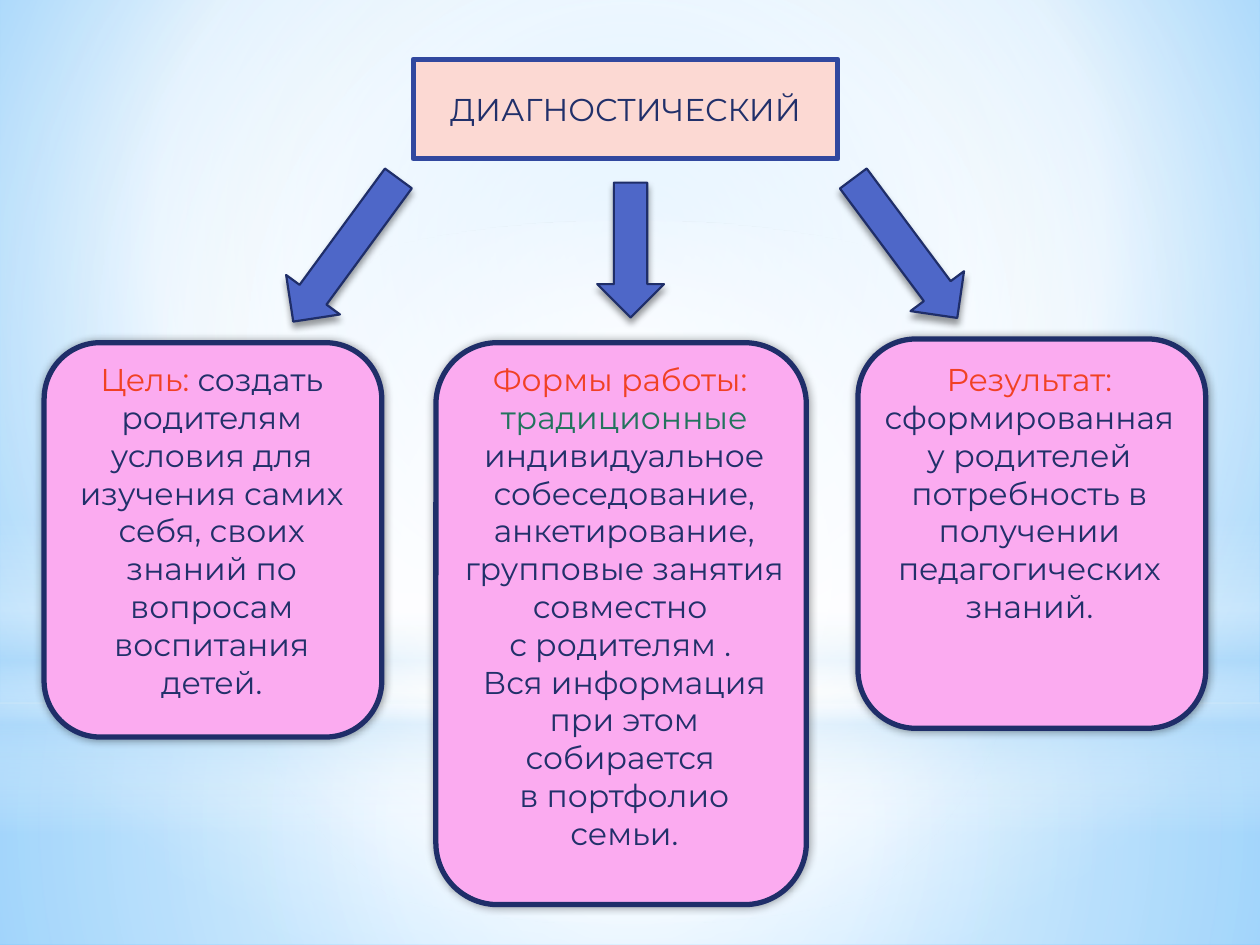
from pptx import Presentation, util as u
from pptx.dml.color import RGBColor
from pptx.enum import shapes, text
from pptx.oxml import parse_xml
from pptx.oxml.ns import nsdecls, qn

# The slide is a grid of 100 columns by 75 rows of square cells.
COLUMNS, ROWS = 100, 75
CELL = u.Inches(0.1)

FONT = "Montserrat"
NAVY = RGBColor(0x21, 0x30, 0x6A)
OUTLINE = RGBColor(0x1F, 0x2E, 0x69)
BLUE = RGBColor(0x4E, 0x67, 0xC8)
HEADER_LINE = RGBColor(0x31, 0x48, 0x9F)
PEACH = RGBColor(0xFC, 0xD9, 0xD3)
PINK = RGBColor(0xFB, 0xAB, 0xF0)
RED = RGBColor(0xF1, 0x41, 0x24)
GREEN = RGBColor(0x23, 0x73, 0x5D)
WHITE = RGBColor(0xFF, 0xFF, 0xFF)
PALE = RGBColor(0xB4, 0xDC, 0xFA)
SKY = RGBColor(0x9E, 0xD5, 0xFF)
DEEP_SKY = RGBColor(0x5B, 0xB9, 0xFF)

CENTRE = (50, 50, 50, 50)
TEXT_TOP = 28.1

# Each branch: card, arrow and text boxes in cells, arrow turn, paragraphs of spans.
BRANCHES = [
    ((3.5, 27.2, 26.8, 31.3), (24.8, 12.8, 5.3, 14.1), 36.3,
     (3.9, TEXT_TOP, 25.8, 28.3),
     [[("Цель: ", RED),
       ("создать родителям условия для изучения самих себя, своих знаний "
        "по вопросам воспитания детей.", NAVY)]]),
    ((34.6, 27.2, 29.4, 44.6), (47.4, 14.5, 5.3, 10.7), 0,
     (35.9, TEXT_TOP, 27.3, 43.4),
     [[("Формы работы: ", RED)],
      [("традиционные ", GREEN),
       ("индивидуальное собеседование, анкетирование, групповые занятия "
        "совместно ", NAVY)],
      [("с родителям . ", NAVY)],
      [("Вся информация при этом собирается ", NAVY)],
      [("в портфолио семьи.", NAVY)]]),
    ((68.1, 26.9, 27.6, 30.9), (69.2, 12.8, 5.3, 13.8), 323.3,
     (68.8, TEXT_TOP, 25.8, 22.2),
     [[("Результат: ", RED),
       ("сформированная у родителей потребность в получении "
        "педагогических знаний.", NAVY)]]),
]


def cells(box):
    return [round(CELL * length) for length in box]


def set_gradient(holder, stops, focus=None):
    """Replace the empty fill of holder by a gradient: radial around focus, or downwards."""
    marks = "".join(
        f'<a:gs pos="{place * 1000}"><a:srgbClr val="{colour}">'
        f'<a:alpha val="{alpha * 1000}"/></a:srgbClr></a:gs>'
        for place, colour, alpha in stops)
    if focus:
        edges = " ".join(f'{side}="{share * 1000}"' for side, share in zip("ltrb", focus))
        course = f'<a:path path="circle"><a:fillToRect {edges}/></a:path>'
    else:
        course = '<a:lin ang="5400000" scaled="0"/>'
    gradient = parse_xml(f'<a:gradFill {nsdecls("a")} rotWithShape="1">'
                         f'<a:gsLst>{marks}</a:gsLst>{course}</a:gradFill>')
    holder.replace(holder.find(qn("a:noFill")), gradient)


def add_shadow(shape, blur, distance=0, angle=0):
    shape.shadow.inherit = False
    shape._element.spPr.find(qn("a:effectLst")).append(parse_xml(
        f'<a:outerShdw {nsdecls("a")} blurRad="{u.Pt(blur)}" dist="{u.Pt(distance)}" '
        f'dir="{angle * 60000}" algn="ctr" rotWithShape="0"><a:srgbClr val="000000">'
        '<a:alpha val="40000"/></a:srgbClr></a:outerShdw>'))


def paint(shape, fill, line, width):
    shape.fill.solid()
    shape.fill.fore_color.rgb = fill
    shape.line.color.rgb = line
    shape.line.width = u.Pt(width)


def format_span(span, colour):
    span.font.name = FONT
    span.font.size = u.Pt(18)
    span.font.color.rgb = colour


def draw_backdrop(page):
    page.background.fill.background()
    set_gradient(page._element.cSld.bg.bgPr,
                 [(0, SKY, 100), (60, WHITE, 100), (100, DEEP_SKY, 100)], (20, 10, 20, 60))
    rectangle, oval = shapes.MSO_SHAPE.RECTANGLE, shapes.MSO_SHAPE.OVAL
    horizon = 55.8
    layers = [
        (rectangle, (0, horizon, COLUMNS, ROWS - horizon),
         [(0, WHITE, 91), (37, WHITE, 76), (100, PALE, 79)], CENTRE),
        (rectangle, (0, 0, COLUMNS, horizon),
         [(0, WHITE, 89), (48, WHITE, 62), (100, PALE, 79)], CENTRE),
        (rectangle, (0, 41.2, COLUMNS, 25),
         [(0, WHITE, 0), (29, WHITE, 30), (45, PALE, 40), (55, WHITE, 26),
          (65, PALE, 60), (100, WHITE, 0)], None),
        (oval, (0, 17.5, COLUMNS, 55.8), [(0, WHITE, 100), (56, WHITE, 0)], CENTRE),
    ]
    for kind, box, stops, focus in layers:
        layer = page.shapes.add_shape(kind, *cells(box))
        layer.shadow.inherit = False
        layer.line.fill.background()
        layer.fill.background()
        set_gradient(layer._element.spPr, stops, focus)


def draw_header(page, box):
    """Turn the title placeholder into a rounded box in front of the backdrop."""
    title = page.shapes.title
    title.left, title.top, title.width, title.height = cells(box)
    title._element.spPr.append(parse_xml(
        f'<a:prstGeom {nsdecls("a")} prst="roundRect"><a:avLst/></a:prstGeom>'))
    paint(title, PEACH, HEADER_LINE, 3)
    title.text_frame.text = "ДИАГНОСТИЧЕСКИЙ"
    title.text_frame.vertical_anchor = text.MSO_ANCHOR.MIDDLE
    para = title.text_frame.paragraphs[0]
    para.alignment = text.PP_ALIGN.CENTER
    format_span(para.runs[0], NAVY)
    page.shapes._spTree.append(title._element)


def draw_card(page, box):
    card = page.shapes.add_shape(shapes.MSO_SHAPE.ROUNDED_RECTANGLE, *cells(box))
    paint(card, PINK, OUTLINE, 3)
    add_shadow(card, 5)


def draw_arrow(page, box, turn):
    arrow = page.shapes.add_shape(shapes.MSO_SHAPE.DOWN_ARROW, *cells(box))
    arrow.rotation = turn
    paint(arrow, BLUE, OUTLINE, 1.25)
    add_shadow(arrow, 4, 3, 90)


def write_text(page, box, paragraphs):
    frame = page.shapes.add_textbox(*cells(box)).text_frame
    frame.word_wrap = True
    frame.auto_size = text.MSO_AUTO_SIZE.SHAPE_TO_FIT_TEXT
    for index, spans in enumerate(paragraphs):
        para = frame.add_paragraph() if index else frame.paragraphs[0]
        para.alignment = text.PP_ALIGN.CENTER
        for words, colour in spans:
            span = para.add_run()
            span.text = words
            format_span(span, colour)


def main():
    deck = Presentation()
    deck.slide_width, deck.slide_height = CELL * COLUMNS, CELL * ROWS
    page = deck.slides.add_slide(deck.slide_layouts.get_by_name("Title Only"))
    draw_backdrop(page)
    draw_header(page, (32.8, 4.7, 33.7, 7.9))
    for card, arrow, turn, text_box, paragraphs in BRANCHES:
        draw_card(page, card)
        draw_arrow(page, arrow, turn)
        write_text(page, text_box, paragraphs)
    deck.save("out.pptx")


if __name__ == "__main__":
    main()
